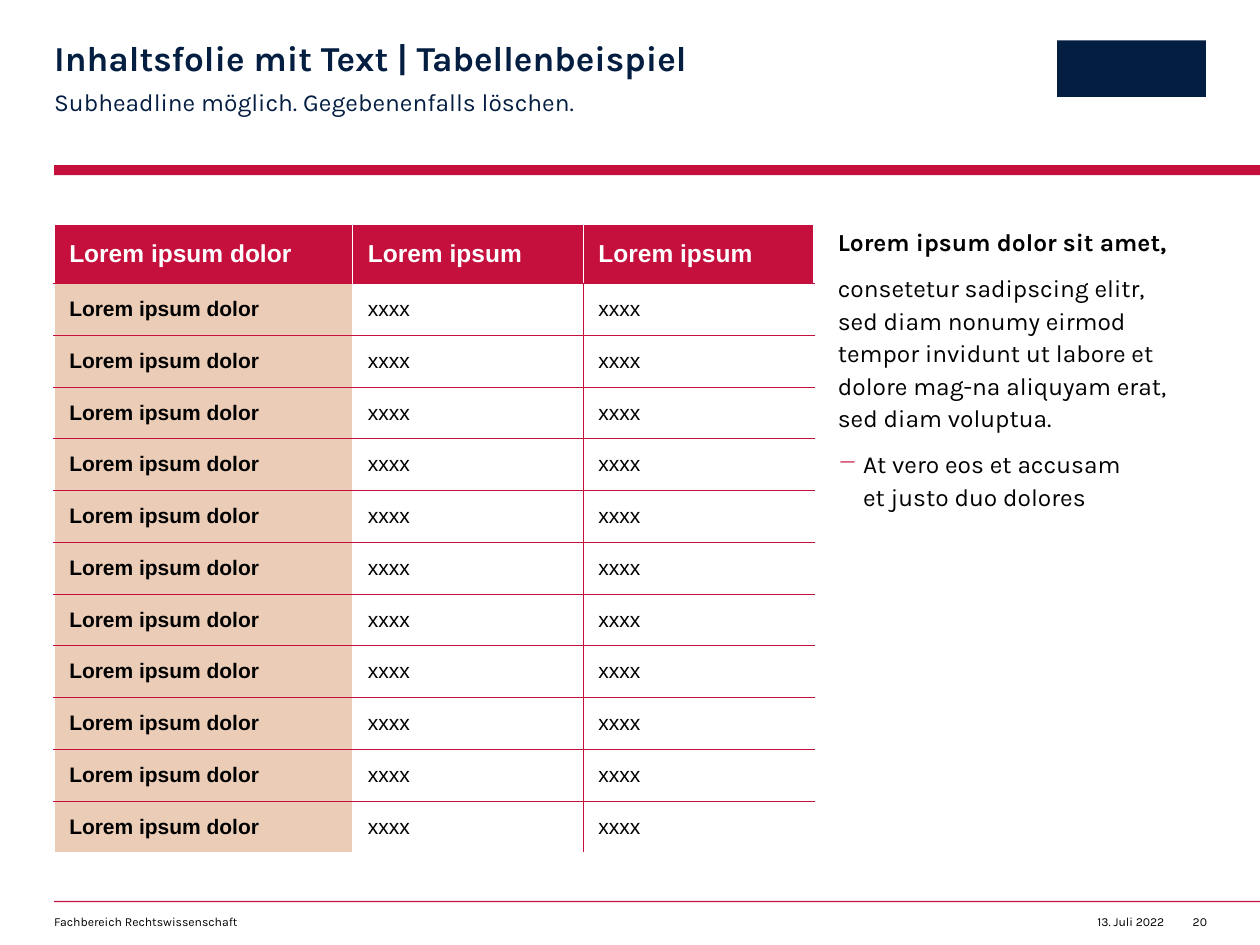
from lxml import etree
from pptx import Presentation
from pptx.dml.color import RGBColor
from pptx.enum.shapes import MSO_SHAPE
from pptx.enum.text import MSO_ANCHOR, MSO_AUTO_SIZE, PP_ALIGN
from pptx.oxml.ns import qn
from pptx.util import Inches, Pt

RECT = MSO_SHAPE.RECTANGLE
TOP, MIDDLE = MSO_ANCHOR.TOP, MSO_ANCHOR.MIDDLE
LEFT, RIGHT = PP_ALIGN.LEFT, PP_ALIGN.RIGHT
NO_FIT = MSO_AUTO_SIZE.NONE
RED, NAVY, SAND, WHITE, BLACK = "C50F3C", "041E42", "EBCCB7", "FFFFFF", "000000"
TITLE_ONLY = 5


def rgb(value):
    return RGBColor.from_string(value)


def write(p, text, size=14, font="Karla", color=BLACK, bold=False,
          align=LEFT, spacing=None, after=0):
    p.text = text
    p.alignment = align
    p.line_spacing = spacing
    p.space_before, p.space_after = Pt(0), Pt(after)
    for r in p.runs:
        r.font.size, r.font.name, r.font.bold = Pt(size), font, bold
        r.font.color.rgb = rgb(color)
    for br in p._p.findall(qn("a:br")):
        etree.SubElement(br, qn("a:rPr"), sz=str(size * 100))


prs = Presentation()
prs.slide_width, prs.slide_height = Inches(10), Inches(7.5)
s = prs.slides.add_slide(prs.slide_layouts[TITLE_ONLY])

# Header bar, footer rule and plain block in the logo position
for x, y, w, h, color in [
    (0.43, 1.31, 9.57, 0.08, RED),
    (0.43, 7.15, 9.57, 0.01, RED),
    (8.39, 0.32, 1.18, 0.45, NAVY),
]:
    sp = s.shapes.add_shape(RECT, Inches(x), Inches(y), Inches(w), Inches(h))
    sp.shadow.inherit = False
    sp.fill.solid()
    sp.fill.fore_color.rgb = rgb(color)
    sp.line.fill.background()

# Title
title = s.shapes.title
title.left, title.top = Inches(0.43), Inches(0.33)
title.width, title.height = Inches(5.61), Inches(0.3)
write(title.text_frame.paragraphs[0], "Inhaltsfolie mit Text | Tabellenbeispiel",
      size=20, color=NAVY, bold=True, spacing=0.9)

# Subheadline, side text and footer: position, right inset, paragraphs
body = dict(spacing=1.1, after=8)
small = dict(size=7)
text_boxes = [
    (0.43, 0.67, 5.61, 0.24, 0, [
        ("Subheadline möglich. Gegebenenfalls löschen.", dict(body, color=NAVY))]),
    (6.65, 1.78, 2.93, 5, 0.2, [
        ("Lorem ipsum dolor sit amet,", dict(body, bold=True)),
        ("consetetur sadipscing elitr, sed diam nonumy eirmod tempor invidunt "
         "ut labore et dolore mag-na aliquyam erat, sed diam voluptua.", body),
        ("At vero eos et accusam\net justo duo dolores", body)]),
    (0.43, 7.26, 4.49, 0.12, 0, [("Fachbereich Rechtswissenschaft", small)]),
    (8.65, 7.26, 0.59, 0.12, 0, [("13. Juli 2022", dict(small, align=RIGHT))]),
    (9.38, 7.26, 0.2, 0.12, 0, [("20", dict(small, align=RIGHT))]),
]
frames = [(title.text_frame, 0)]
for x, y, w, h, inset, paragraphs in text_boxes:
    tf = s.shapes.add_textbox(Inches(x), Inches(y), Inches(w), Inches(h)).text_frame
    frames.append((tf, inset))
    for i, (text, style) in enumerate(paragraphs):
        p = tf.add_paragraph() if i else tf.paragraphs[0]
        write(p, text, **style)
for tf, inset in frames:
    tf.margin_left = tf.margin_top = tf.margin_bottom = 0
    tf.margin_right = Inches(inset)
    tf.word_wrap, tf.auto_size, tf.vertical_anchor = True, NO_FIT, TOP

# Red dash on the last paragraph of the side text
bullet_p = frames[2][0].paragraphs[-1]
pPr = bullet_p._p.get_or_add_pPr()
pPr.set("marL", str(Inches(0.2)))
pPr.set("indent", str(-Inches(0.2)))
bullet_color = etree.SubElement(pPr, qn("a:buClr"))
etree.SubElement(bullet_color, qn("a:srgbClr"), val=RED)
etree.SubElement(pPr, qn("a:buChar"), char="−")

# Table
rows = [["Lorem ipsum dolor", "Lorem ipsum", "Lorem ipsum"]]
rows += [["Lorem ipsum dolor", "xxxx", "xxxx"]] * 11
col_widths = [2.37, 1.83, 1.83]
table_height, header_height = 4.99, 0.47
last_row, last_col = len(rows) - 1, len(col_widths) - 1
table = s.shapes.add_table(len(rows), len(col_widths), Inches(0.43), Inches(1.78),
                           Inches(sum(col_widths)), Inches(table_height)).table
table.first_row = table.horz_banding = False
for column, width in zip(table.columns, col_widths):
    column.width = Inches(width)
for i, row in enumerate(table.rows):
    row.height = Inches(header_height if i == 0
                        else (table_height - header_height) / last_row)

outer, header_inner, inner = (WHITE, 1), (WHITE, 0.5), (RED, 0.25)
for i, row in enumerate(rows):
    for j, text in enumerate(row):
        cell = table.cell(i, j)
        cell.vertical_anchor = MIDDLE
        cell.margin_left = cell.margin_right = Inches(0.12)
        cell.margin_top = cell.margin_bottom = Inches(0.04)
        header = i == 0
        write(cell.text_frame.paragraphs[0], text, size=14 if header else 12,
              font="Arial", color=WHITE if header else BLACK,
              bold=header or j == 0)
        if header or j == 0:
            cell.fill.solid()
            cell.fill.fore_color.rgb = rgb(RED if header else SAND)
        else:
            cell.fill.background()

        # Borders: vertical edges are numbered 0 to 3 from the left
        verticals = [outer, header_inner if header else outer,
                     header_inner if header else inner, outer]
        borders = [("a:lnL", verticals[j]), ("a:lnR", verticals[j + 1]),
                   ("a:lnT", outer if header else inner),
                   ("a:lnB", outer if i == last_row else inner)]
        tcPr = cell._tc.get_or_add_tcPr()
        for k, (tag, (color, width)) in enumerate(borders):
            ln = etree.Element(qn(tag), w=str(Pt(width)))
            fill = etree.SubElement(ln, qn("a:solidFill"))
            etree.SubElement(fill, qn("a:srgbClr"), val=color)
            tcPr.insert(k, ln)

prs.save("out.pptx")
